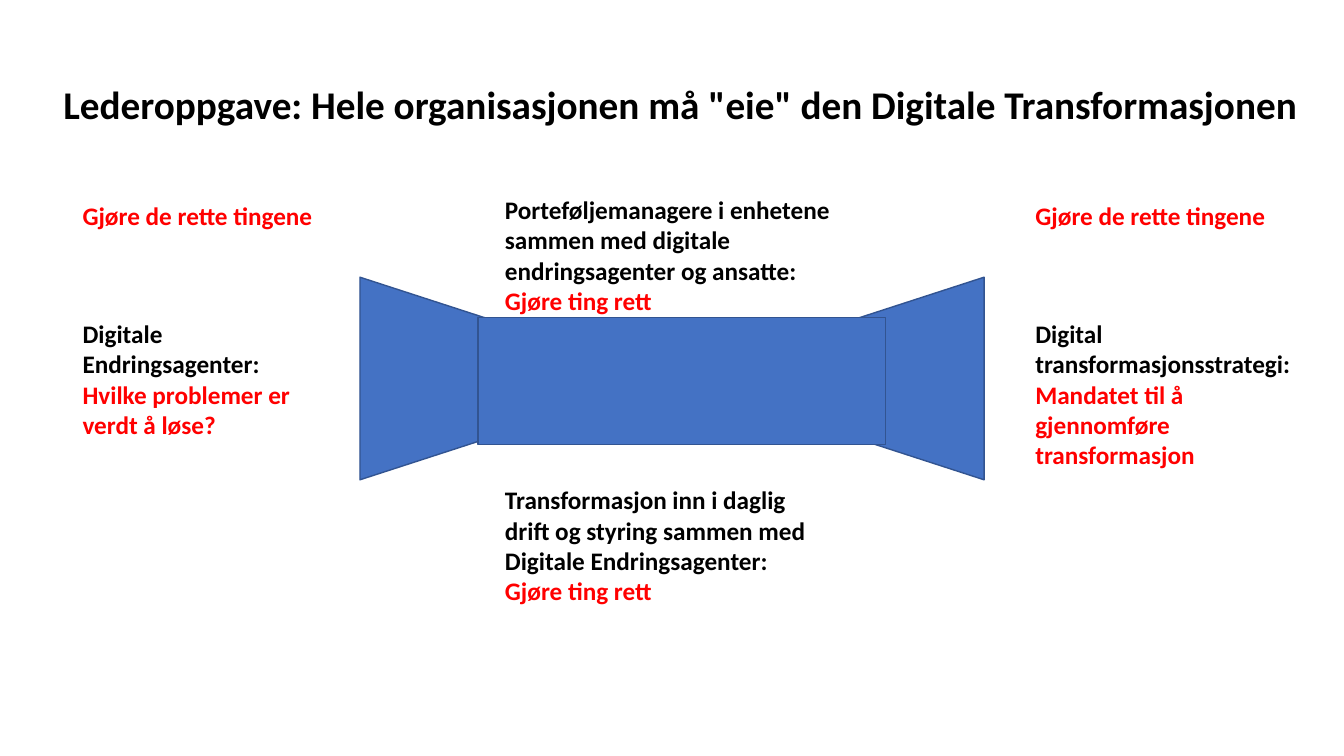
from dataclasses import dataclass

from pptx import Presentation
from pptx.dml.color import RGBColor
from pptx.enum.shapes import MSO_SHAPE
from pptx.enum.text import MSO_AUTO_SIZE
from pptx.slide import Slide
from pptx.util import Inches, Pt


@dataclass(frozen=True)
class Theme:
    font: str = "Calibri"
    title_size: int = 28
    body_size: int = 18
    black: RGBColor = RGBColor(0, 0, 0)
    red: RGBColor = RGBColor(0xFF, 0, 0)
    blue: RGBColor = RGBColor(0x44, 0x72, 0xC4)
    outline: RGBColor = RGBColor(0x32, 0x54, 0x91)


@dataclass(frozen=True)
class Box:
    left: float
    top: float
    width: float
    height: float


@dataclass(frozen=True)
class Note:
    """A black heading and a red message; either may be empty."""
    box: Box
    heading: str
    message: str


THEME = Theme()
LEFT, MIDDLE, RIGHT = 0.72, 4.91, 10.17
UPPER, LOWER = 1.94, 3.11
RIGHT_THINGS, THINGS_RIGHT = "Gjøre de rette tingene", "Gjøre ting rett"

TITLE = Note(Box(0.53, 0.75, 12.62, 0.57),
             'Lederoppgave: Hele organisasjonen må "eie" den Digitale Transformasjonen', "")
NOTES = [
    Note(Box(LEFT, LOWER, 2.39, 1.31),
         "Digitale Endringsagenter:", "Hvilke problemer er verdt å løse?"),
    Note(Box(RIGHT, LOWER, 2.87, 1.62),
         "Digital transformasjonsstrategi:", "Mandatet til å gjennomføre transformasjon"),
    Note(Box(MIDDLE, 4.76, 3.24, 1.31),
         "Transformasjon inn i daglig drift og styring sammen med Digitale Endringsagenter:",
         THINGS_RIGHT),
    Note(Box(MIDDLE, 1.88, 4.17, 1.31),
         "Porteføljemanagere i enhetene sammen med digitale endringsagenter og ansatte:",
         THINGS_RIGHT),
    Note(Box(LEFT, UPPER, 2.61, 0.4), "", RIGHT_THINGS),
    Note(Box(RIGHT, UPPER, 2.61, 0.4), "", RIGHT_THINGS),
]


def lengths(box: Box) -> list[Inches]:
    return [Inches(v) for v in (box.left, box.top, box.width, box.height)]


def write(p, text: str, *, size: int, color: RGBColor, bold: bool = True) -> None:
    r = p.add_run()
    r.text = text
    r.font.name = THEME.font
    r.font.size = Pt(size)
    r.font.bold = bold
    r.font.color.rgb = color


def add_note(s: Slide, note: Note, size: int = THEME.body_size) -> None:
    tf = s.shapes.add_textbox(*lengths(note.box)).text_frame
    tf.word_wrap = True
    tf.auto_size = MSO_AUTO_SIZE.SHAPE_TO_FIT_TEXT
    parts = [(note.heading, THEME.black), (note.message, THEME.red)]
    for i, (text, color) in enumerate(part for part in parts if part[0]):
        p = tf.add_paragraph() if i else tf.paragraphs[0]
        write(p, text, size=size, color=color)


def add_block(s: Slide, kind: MSO_SHAPE, box: Box, rotation: float = 0) -> None:
    sp = s.shapes.add_shape(kind, *lengths(box))
    sp.rotation = rotation
    sp.shadow.inherit = False
    sp.fill.solid()
    sp.fill.fore_color.rgb = THEME.blue
    sp.line.color.rgb = THEME.outline
    sp.line.width = Pt(1)


def main() -> None:
    prs = Presentation()
    prs.slide_width, prs.slide_height = Inches(13.33), Inches(7.5)
    s = prs.slides.add_slide(prs.slide_layouts[6])
    add_block(s, MSO_SHAPE.FLOWCHART_COLLATE, Box(5.66, 0.66, 2.01, 6.19), rotation=270)
    add_block(s, MSO_SHAPE.FLOWCHART_PROCESS, Box(4.74, 3.15, 4.04, 1.26))
    add_note(s, TITLE, THEME.title_size)
    for note in NOTES:
        add_note(s, note)
    prs.save("out.pptx")


if __name__ == "__main__":
    main()
